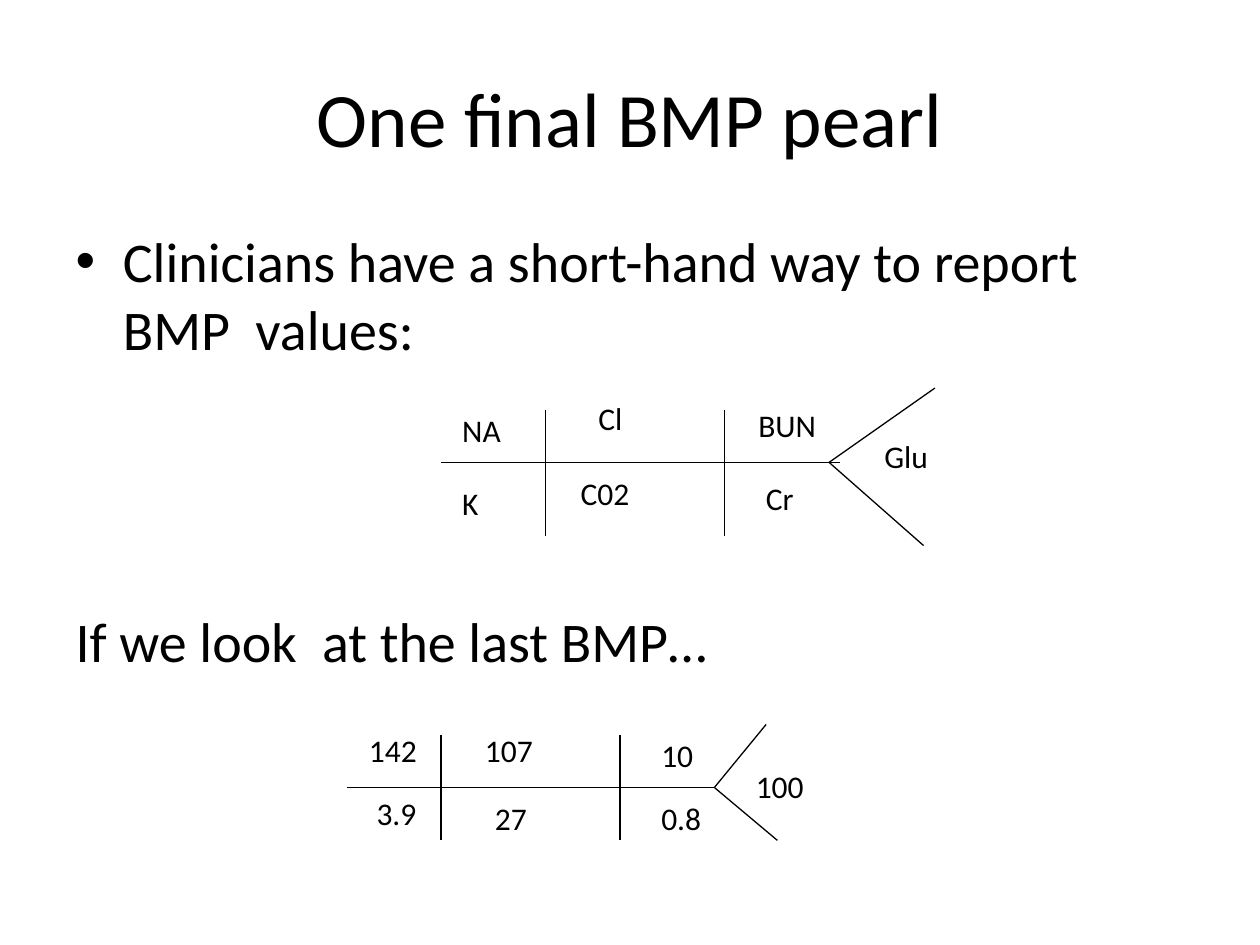
from lxml import etree
from pptx import Presentation
from pptx import util as u
from pptx.dml.color import RGBColor
from pptx.enum import shapes, text
from pptx.oxml.ns import qn

INK = "000000"
FONT = "Calibri"
LABEL_HEIGHT = 0.4

HEADING = "One final BMP pearl"
STATEMENTS = [
    ("Clinicians have a short-hand way to report BMP  values:", True, 6.4),
    ("If we look  at the last BMP…", False, 140),
]
FISHBONES = [
    {
        "spine": (3.5, 6.67, 3.67),
        "ribs": (4.33, 5.75),
        "rib_span": (3.25, 4.25),
        "fork": 6.58,
        "tips": [(7.42, 3.08), (7.33, 4.33)],
        "labels": [
            ("NA", 3.57, 3.21, 0.55), ("K", 3.57, 3.79, 0.37),
            ("Cl", 4.65, 3.12, 0.44), ("C02", 4.51, 3.71, 0.69),
            ("BUN", 5.92, 3.17, 0.73), ("Cr", 5.98, 3.75, 0.47),
            ("Glu", 6.92, 3.42, 0.59),
        ],
    },
    {
        "spine": (2.75, 5.67, 6.25),
        "ribs": (3.5, 4.92),
        "rib_span": (5.83, 6.67),
        "fork": 5.67,
        "tips": [(6.08, 5.75), (6.17, 6.67)],
        "labels": [
            ("142", 2.83, 5.75, 0.62), ("3.9", 2.89, 6.25, 0.56),
            ("107", 3.75, 5.75, 0.62), ("27", 3.83, 6.29, 0.63),
            ("10", 5.15, 5.79, 0.48), ("0.8", 5.15, 6.29, 0.55),
            ("100", 5.9, 6.04, 0.62),
        ],
    },
]


def color(value):
    return RGBColor.from_string(value)


def inches(*values):
    return [u.Inches(value) for value in values]


def style(paragraph, size):
    paragraph.font.name = FONT
    paragraph.font.size = u.Pt(size)
    paragraph.font.color.rgb = color(INK)


def place(holder, *box):
    holder.left, holder.top, holder.width, holder.height = inches(*box)


def add_line(slide, start, end):
    line = slide.shapes.add_connector(
        shapes.MSO_CONNECTOR.STRAIGHT, *inches(*start, *end))
    line.line.color.rgb = color(INK)
    line.line.width = u.Pt(0.75)
    etree.SubElement(line._element.spPr, qn("a:effectLst"))


def add_label(slide, wording, left, top, width):
    label = slide.shapes.add_textbox(*inches(left, top, width, LABEL_HEIGHT))
    label.text_frame.word_wrap = True
    label.text_frame.text = wording
    style(label.text_frame.paragraphs[0], 18)


def add_fishbone(slide, bone):
    start, end, middle = bone["spine"]
    top, bottom = bone["rib_span"]
    add_line(slide, (start, middle), (end, middle))
    for rib in bone["ribs"]:
        add_line(slide, (rib, top), (rib, bottom))
    for tip in bone["tips"]:
        add_line(slide, (bone["fork"], middle), tip)
    for label in bone["labels"]:
        add_label(slide, *label)


def add_statements(body):
    body.text_frame.text = "\n".join(words for words, _, _ in STATEMENTS)
    for paragraph, (_, bulleted, gap) in zip(body.text_frame.paragraphs, STATEMENTS):
        style(paragraph, 32)
        paragraph.space_before = u.Pt(gap)
        if not bulleted:
            etree.SubElement(paragraph._p.get_or_add_pPr(), qn("a:buNone"))
            properties = paragraph._p.pPr
            properties.insert(1, properties[-1])


def main():
    deck = Presentation()
    deck.slide_width, deck.slide_height = inches(10, 7.5)
    slide = deck.slides.add_slide(deck.slide_layouts[1])

    title = slide.shapes.title
    place(title, 0.5, 0.3, 9, 1.25)
    title.text_frame.text = HEADING
    title.text_frame.vertical_anchor = text.MSO_ANCHOR.MIDDLE
    title.text_frame.paragraphs[0].alignment = text.PP_ALIGN.CENTER
    style(title.text_frame.paragraphs[0], 44)

    body = slide.placeholders[1]
    place(body, 0.5, 1.75, 9, 4.95)
    add_statements(body)

    for bone in FISHBONES:
        add_fishbone(slide, bone)
    deck.save("out.pptx")


if __name__ == "__main__":
    main()
